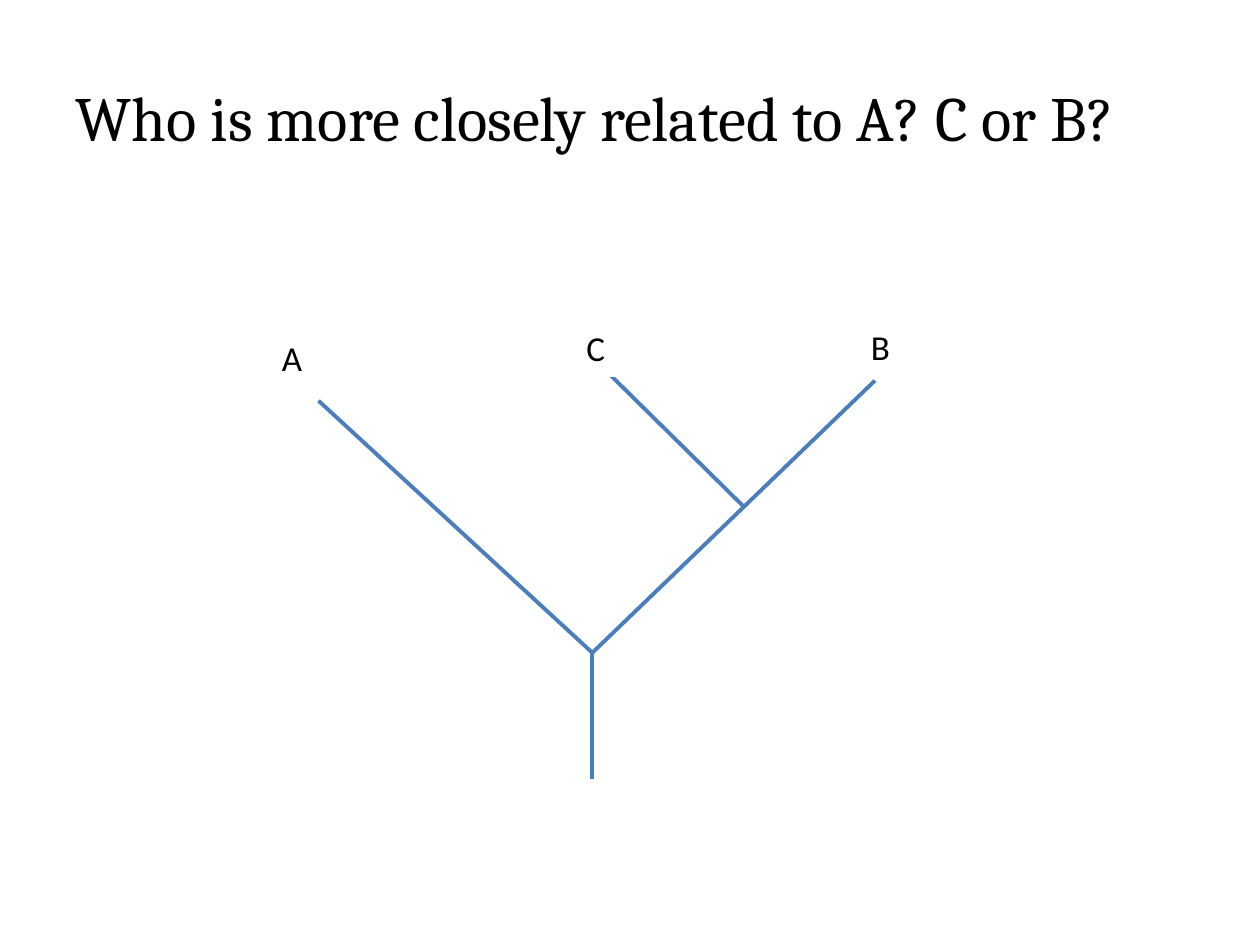
from pptx import Presentation
from pptx.dml.color import RGBColor
from pptx.enum.shapes import MSO_CONNECTOR, MSO_SHAPE
from pptx.enum.text import MSO_ANCHOR, MSO_AUTO_SIZE, PP_ALIGN
from pptx.oxml.ns import qn
from pptx.util import Pt
from lxml import etree

STRAIGHT = MSO_CONNECTOR.STRAIGHT
RECTANGLE = MSO_SHAPE.RECTANGLE
MIDDLE, TOP = MSO_ANCHOR.MIDDLE, MSO_ANCHOR.TOP
LEFT = PP_ALIGN.LEFT
FIT_SHAPE = MSO_AUTO_SIZE.SHAPE_TO_FIT_TEXT
TITLE_ONLY = 5


def color(value):
    return RGBColor.from_string(value)


class TreePage:
    """Style and drawing methods for one tree diagram slide."""
    title_font, label_font = "Cambria", "Calibri"
    ink, branch_color, paper = "000000", "4B7EBC", "FFFFFF"
    line_width = 2.25
    label_size = (59, 31.5)

    def __init__(self, deck):
        self.page = deck.slides.add_slide(deck.slide_layouts[TITLE_ONLY])

    def set_text(self, frame, text, font, size, anchor):
        frame.text = text
        frame.word_wrap = True
        frame.vertical_anchor = anchor
        para = frame.paragraphs[0]
        para.alignment = LEFT
        span = para.runs[0]
        span.font.name = font
        span.font.size = Pt(size)
        span.font.color.rgb = color(self.ink)

    def title(self, text, left, top, width, height):
        box = self.page.shapes.title
        box.left, box.top = Pt(left), Pt(top)
        box.width, box.height = Pt(width), Pt(height)
        self.set_text(box.text_frame, text, self.title_font, 36, MIDDLE)

    def branch(self, start, end):
        points = [Pt(value) for value in (*start, *end)]
        line = self.page.shapes.add_connector(STRAIGHT, *points)
        line.line.color.rgb = color(self.branch_color)
        line.line.width = Pt(self.line_width)
        etree.SubElement(line._element.spPr, qn("a:effectLst"))

    def label(self, text, left, top):
        width, height = self.label_size
        box = self.page.shapes.add_shape(
            RECTANGLE, Pt(left), Pt(top), Pt(width), Pt(height))
        box.shadow.inherit = False
        box.fill.background()
        box.line.color.rgb = color(self.paper)
        box.line.width = Pt(self.line_width)
        self.set_text(box.text_frame, text, self.label_font, 20, TOP)
        box.text_frame.auto_size = FIT_SHAPE


def main():
    deck = Presentation()
    deck.slide_width, deck.slide_height = Pt(720), Pt(540)
    tree = TreePage(deck)
    tree.title("Who is more closely related to A? C or B?", 36, 21.6, 648, 90)

    # Trunk and the two main branches
    fork = (338.5, 373)
    for tip in ((338.5, 445), (500, 217.5), (182, 229)):
        tree.branch(fork, tip)

    # Outer labels, then the side branch with its label over the tip
    tree.label("A", 154, 188.5)
    tree.label("B", 490.5, 182.5)
    tree.branch((425.5, 290), (349, 214.5))
    tree.label("C", 328, 183)

    deck.save("out.pptx")


if __name__ == "__main__":
    main()
